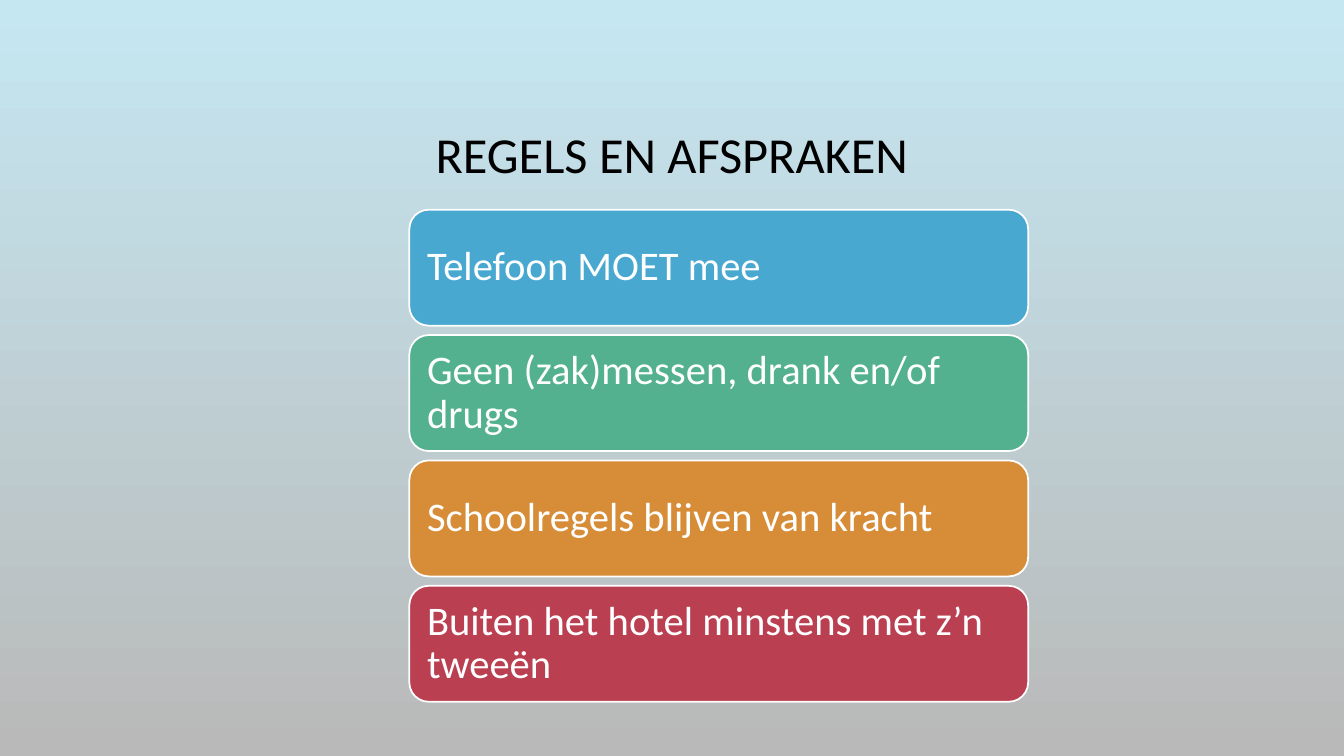
from pptx import Presentation, util as u
from pptx.dml.color import RGBColor
from pptx.enum import shapes, text

BLACK = RGBColor(0x00, 0x00, 0x00)
WHITE = RGBColor(0xFF, 0xFF, 0xFF)
SKY = RGBColor(0xC5, 0xE7, 0xF2)
GREY = RGBColor(0xB9, 0xB9, 0xB9)
BLUE = RGBColor(0x48, 0xA8, 0xD0)
GREEN = RGBColor(0x53, 0xB1, 0x8F)
ORANGE = RGBColor(0xD7, 0x8D, 0x38)
RED = RGBColor(0xBA, 0x3F, 0x51)

RULES = [
    ("Telefoon MOET mee", BLUE),
    ("Geen (zak)messen, drank en/of drugs", GREEN),
    ("Schoolregels blijven van kracht", ORANGE),
    ("Buiten het hotel minstens met z’n tweeën", RED),
]
RULE_LEFT, RULE_TOP, RULE_WIDTH, RULE_HEIGHT = 292.4, 149.8, 442, 82.8
RULE_PITCH = 89.55


class Page:
    font_name = "Calibri"
    line_spacing = 0.9

    def __init__(self, deck):
        self.slide = deck.slides.add_slide(deck.slide_layouts[6])

    def background(self, top_color, bottom_color):
        fill = self.slide.background.fill
        fill.gradient()
        fill.gradient_angle = 270
        for stop, color in zip(fill.gradient_stops, (top_color, bottom_color)):
            stop.color.rgb = color

    def label(self, box, words, size, color, align, inset):
        frame = box.text_frame
        frame_format = {
            "word_wrap": True,
            "vertical_anchor": text.MSO_ANCHOR.MIDDLE,
            "margin_left": u.Pt(inset),
            "margin_top": u.Pt(inset),
            "margin_right": u.Pt(inset),
            "margin_bottom": u.Pt(inset),
        }
        for name, value in frame_format.items():
            setattr(frame, name, value)
        para = frame.paragraphs[0]
        para.alignment = align
        para.line_spacing = self.line_spacing
        span = para.add_run()
        span.text = words
        for name, value in {"name": self.font_name, "size": u.Pt(size)}.items():
            setattr(span.font, name, value)
        span.font.color.rgb = color

    def title(self, words, *place):
        box = self.slide.shapes.add_textbox(*map(u.Pt, place))
        self.label(box, words, 36, BLACK, text.PP_ALIGN.CENTER, 3.6)

    def rule(self, words, color, *place):
        box = self.slide.shapes.add_shape(
            shapes.MSO_SHAPE.ROUNDED_RECTANGLE, *map(u.Pt, place))
        box.shadow.inherit = False
        box.fill.solid()
        box.fill.fore_color.rgb = color
        box.line.color.rgb = WHITE
        box.line.width = u.Pt(1.25)
        self.label(box, words, 29, WHITE, text.PP_ALIGN.LEFT, 8.64)


def main():
    deck = Presentation()
    deck.slide_width, deck.slide_height = u.Pt(960), u.Pt(540)
    page = Page(deck)
    page.background(SKY, GREY)
    page.title("REGELS EN AFSPRAKEN", 72, 49, 816, 126)
    for index, (words, color) in enumerate(RULES):
        page.rule(words, color, RULE_LEFT, RULE_TOP + index * RULE_PITCH,
                  RULE_WIDTH, RULE_HEIGHT)
    deck.save("out.pptx")


if __name__ == "__main__":
    main()
